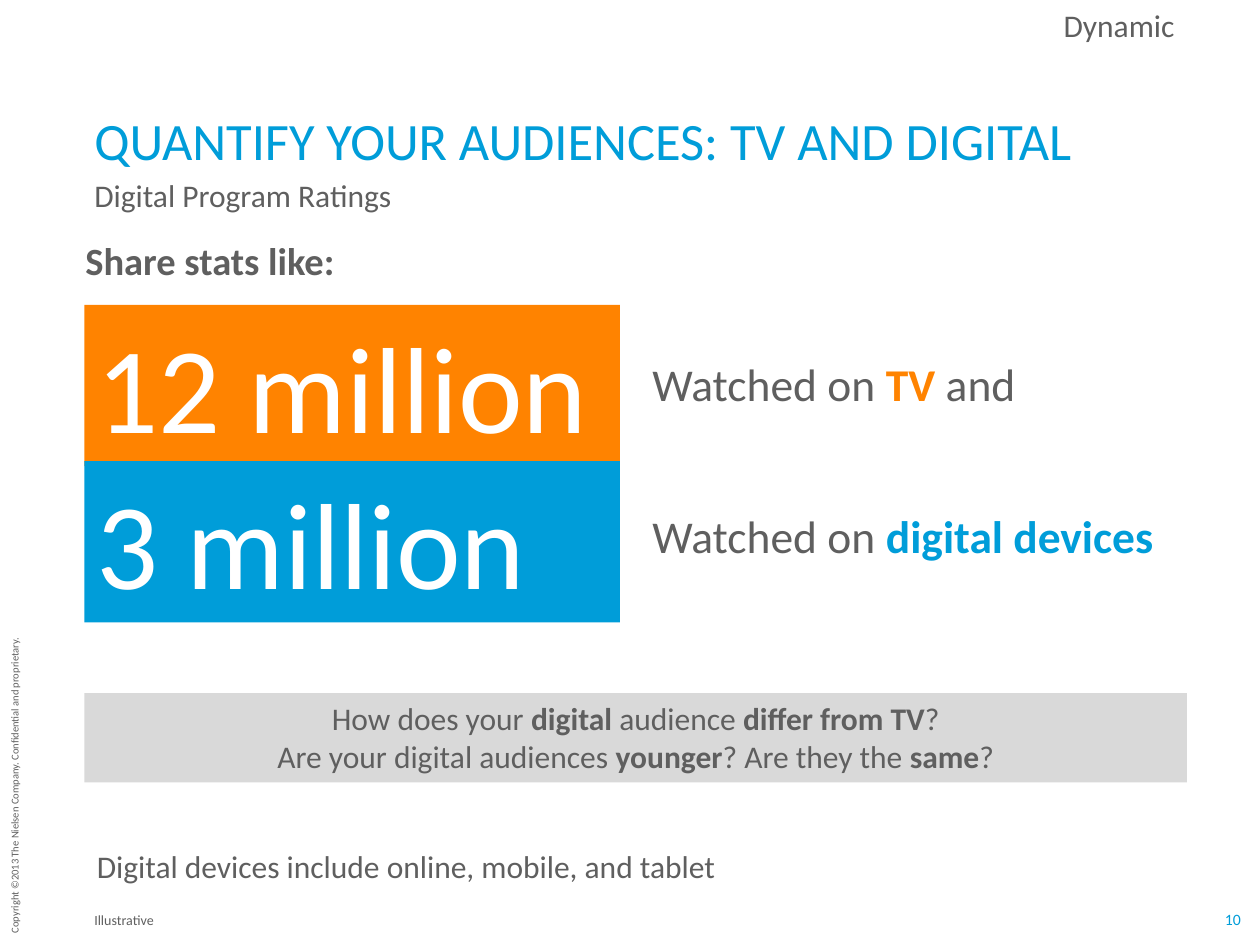
from dataclasses import dataclass

from pptx import Presentation
from pptx.dml.color import RGBColor
from pptx.enum.shapes import MSO_SHAPE
from pptx.enum.text import MSO_ANCHOR, PP_ALIGN
from pptx.util import Inches, Pt

RECT = MSO_SHAPE.RECTANGLE
TOP, MIDDLE, BOTTOM = MSO_ANCHOR.TOP, MSO_ANCHOR.MIDDLE, MSO_ANCHOR.BOTTOM
LEFT, CENTER, RIGHT = PP_ALIGN.LEFT, PP_ALIGN.CENTER, PP_ALIGN.RIGHT


@dataclass(frozen=True)
class Theme:
    font: str = "Calibri"
    grey: str = "5F5F5F"
    blue: str = "009DD9"
    orange: str = "FF8300"
    white: str = "FFFFFF"
    panel: str = "D9D9D9"
    stat: int = 70
    title: int = 30
    label: int = 26
    lead: int = 22
    body: int = 18
    number: int = 9
    note: int = 8
    legal: int = 6


T = Theme()
FLAT = (0.1, 0)  # side and top/bottom insets of the heading boxes


def write(sp, paragraphs, size, color=T.grey, bold=False, align=LEFT,
          anchor=TOP, insets=(0.1, 0.05), wrap=True):
    """Fill a shape; a paragraph is a list of (text, run format) pairs."""
    tf = sp.text_frame
    side, edge = map(Inches, insets)
    frame = {"word_wrap": wrap, "vertical_anchor": anchor,
             "margin_left": side, "margin_right": side,
             "margin_top": edge, "margin_bottom": edge}
    for name, value in frame.items():
        setattr(tf, name, value)
    for i, runs in enumerate(paragraphs):
        p = tf.add_paragraph() if i else tf.paragraphs[0]
        p.alignment = align
        for text, changes in runs:
            r = p.add_run()
            r.text = text
            fmt = {"name": T.font, "size": Pt(size), "bold": bold}
            fmt["bold"] = changes.get("bold", bold)
            for name, value in fmt.items():
                setattr(r.font, name, value)
            r.font.color.rgb = RGBColor.from_string(changes.get("color", color))


def add_text(s, box, paragraphs, size, **style):
    sp = s.shapes.add_textbox(*map(Inches, box))
    write(sp, paragraphs, size, **style)
    return sp


def add_line(s, box, text, size, **style):
    return add_text(s, box, [[(text, {})]], size, **style)


def add_panel(s, box, fill, paragraphs, size, **style):
    sp = s.shapes.add_shape(RECT, *map(Inches, box))
    sp.shadow.inherit = False
    sp.fill.solid()
    sp.fill.fore_color.rgb = RGBColor.from_string(fill)
    sp.line.fill.background()
    write(sp, paragraphs, size, **style)


def main():
    prs = Presentation()
    prs.slide_width, prs.slide_height = Inches(10), Inches(7.5)
    s = prs.slides.add_slide(prs.slide_layouts[6])

    # Copyright line up the left edge, and page number
    legal = add_line(
        s, (-1.18, 6.11, 2.59, 0.2),
        "Copyright ©2013 The Nielsen Company. Confidential and proprietary.",
        T.legal, wrap=False)
    legal.rotation = 270
    add_line(s, (9.71, 7.22, 0.15, 0.15), "10", T.number, color=T.blue,
             align=CENTER, anchor=MIDDLE, insets=(0, 0), wrap=False)

    # Headings
    add_line(s, (0.65, 0.74, 8.93, 0.62),
             "QUANTIFY YOUR AUDIENCES: TV AND DIGITAL", T.title,
             color=T.blue, anchor=BOTTOM, insets=FLAT)
    add_line(s, (0.65, 1.4, 8.92, 0.34), "Digital Program Ratings", T.body,
             insets=FLAT)
    add_line(s, (7.25, 0, 2.17, 0.4), "Dynamic", T.body, align=RIGHT)
    add_line(s, (0.58, 1.83, 6.25, 0.47), "Share stats like:", T.lead,
             bold=True)

    # Audience figures, each with its label
    stats = [
        (2.42, "12 million", T.orange, 2.78, 3.83, "TV ", "and"),
        (3.66, "3 million", T.blue, 3.98, 4.33, "digital devices", ""),
    ]
    for top, figure, color, label_top, width, medium, tail in stats:
        add_panel(s, (0.67, top, 4.25, 1.28), color, [[(figure, {})]], T.stat,
                  color=T.white)
        label = [("Watched on ", {}), (medium, {"color": color, "bold": True})]
        if tail:
            label.append((tail, {}))
        add_text(s, (5.08, label_top, width, 0.54), [label], T.label)

    # Questions
    strong = {"bold": True}
    questions = [
        [("How does your ", {}), ("digital", strong), (" audience ", {}),
         ("differ from TV", strong), ("?", {})],
        [("Are your digital audiences ", {}), ("younger", strong),
         ("? Are they the ", {}), ("same", strong), ("?", {})],
    ]
    add_panel(s, (0.67, 5.5, 8.75, 0.71), T.panel, questions, T.body,
              align=CENTER)

    # Footnotes
    add_line(s, (0.67, 6.67, 6.58, 0.4),
             "Digital devices include online, mobile, and tablet", T.body)
    add_line(s, (0.65, 6.97, 8.93, 0.4), "Illustrative", T.note,
             anchor=BOTTOM, insets=FLAT)

    prs.save("out.pptx")


if __name__ == "__main__":
    main()
